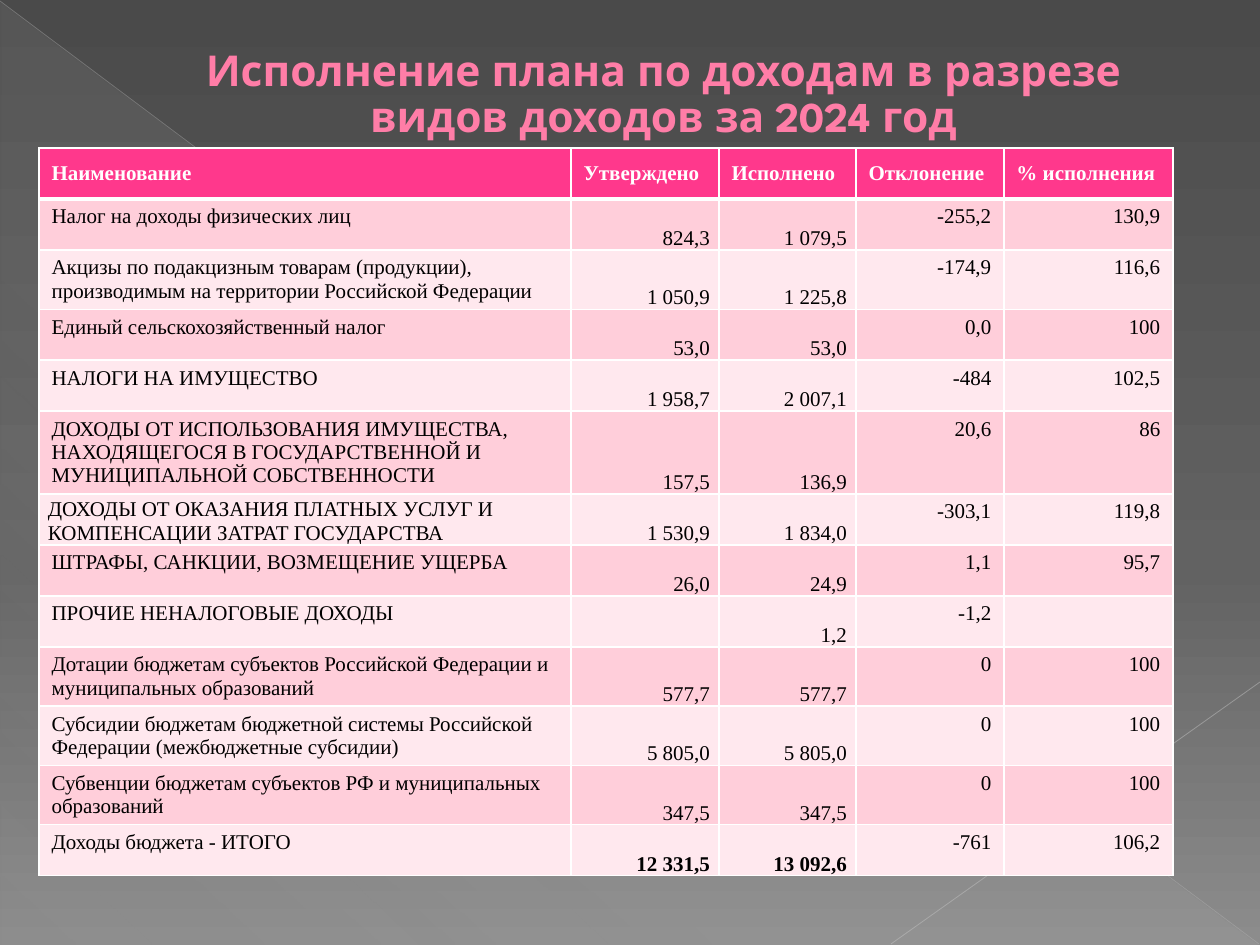
"""Build the slide on income plan execution by type for 2024."""
from lxml import etree
from pptx import Presentation
from pptx import util as u
from pptx.dml.color import RGBColor
from pptx.enum import shapes, text
from pptx.oxml import ns

SCALE = 914400 / 126
TITLE_FONT = "League Spartan"
TABLE_FONT = "Times New Roman"
WHITE = RGBColor(0xFF, 0xFF, 0xFF)
BLACK = RGBColor(0x00, 0x00, 0x00)
PINK = RGBColor(0xFF, 0x7D, 0xA7)
DARK_PINK = RGBColor(0xB1, 0x27, 0x61)
HEADER_PINK = RGBColor(0xFF, 0x38, 0x8C)
BANDS = (RGBColor(0xFF, 0xCE, 0xDA), RGBColor(0xFF, 0xE8, 0xEE))
TOP_GREY = RGBColor(0x4A, 0x4A, 0x4A)
MIDDLE_GREY = RGBColor(0x62, 0x62, 0x62)
BOTTOM_GREY = RGBColor(0x8C, 0x8C, 0x8C)
TRIANGLE_GREY = RGBColor(0xD2, 0xD2, 0xD2)
DIAGONAL_GREY = RGBColor(0xBF, 0xBF, 0xBF)
CORNER_GREY = RGBColor(0xC6, 0xC6, 0xC6)

TITLE = "Исполнение плана по доходам в разрезе видов доходов за 2024 год"
COLUMN_WIDTHS = (532, 148, 137, 148, 169)
ROW_HEIGHT = 51
PAID_SERVICES_ROW = 6
ROWS = (
    ("Наименование", "Утверждено", "Исполнено", "Отклонение", "% исполнения"),
    ("Налог на доходы физических лиц", "824,3", "1 079,5", "-255,2", "130,9"),
    ("Акцизы по подакцизным товарам (продукции), производимым на территории "
     "Российской Федерации", "1 050,9", "1 225,8", "-174,9", "116,6"),
    ("Единый сельскохозяйственный налог", "53,0", "53,0", "0,0", "100"),
    ("НАЛОГИ НА ИМУЩЕСТВО", "1 958,7", "2 007,1", "-484", "102,5"),
    ("ДОХОДЫ ОТ ИСПОЛЬЗОВАНИЯ ИМУЩЕСТВА, НАХОДЯЩЕГОСЯ В ГОСУДАРСТВЕННОЙ И "
     "МУНИЦИПАЛЬНОЙ СОБСТВЕННОСТИ", "157,5", "136,9", "20,6", "86"),
    ("ДОХОДЫ ОТ ОКАЗАНИЯ ПЛАТНЫХ УСЛУГ И КОМПЕНСАЦИИ ЗАТРАТ ГОСУДАРСТВА",
     "1 530,9", "1 834,0", "-303,1", "119,8"),
    ("ШТРАФЫ, САНКЦИИ, ВОЗМЕЩЕНИЕ УЩЕРБА", "26,0", "24,9", "1,1", "95,7"),
    ("ПРОЧИЕ НЕНАЛОГОВЫЕ ДОХОДЫ", "", "1,2", "-1,2", ""),
    ("Дотации бюджетам субъектов Российской Федерации и муниципальных образований",
     "577,7", "577,7", "0", "100"),
    ("Субсидии бюджетам бюджетной системы Российской Федерации "
     "(межбюджетные субсидии)", "5 805,0", "5 805,0", "0", "100"),
    ("Субвенции бюджетам субъектов РФ и муниципальных образований",
     "347,5", "347,5", "0", "100"),
    ("Доходы бюджета - ИТОГО", "12 331,5", "13 092,6", "-761", "106,2"),
)


def px(length):
    """Turn pixels into EMU."""
    return u.Emu(round(length * SCALE))


def add_color(parent, color, opacity=100):
    """Append a colour with its opacity in percent."""
    element = etree.SubElement(parent, ns.qn("a:srgbClr"), val=str(color))
    if opacity < 100:
        etree.SubElement(element, ns.qn("a:alpha"), val=str(opacity * 1000))


def set_gradient(properties, stops, angle):
    """Replace the solid fill of the properties by a linear gradient."""
    gradient = etree.Element(ns.qn("a:gradFill"), rotWithShape="1")
    stop_list = etree.SubElement(gradient, ns.qn("a:gsLst"))
    for position, color, opacity in stops:
        stop = etree.SubElement(stop_list, ns.qn("a:gs"), pos=str(position * 1000))
        add_color(stop, color, opacity)
    etree.SubElement(gradient, ns.qn("a:lin"), ang=str(angle * 60000), scaled="0")
    properties.replace(properties.find(ns.qn("a:solidFill")), gradient)


def set_background(slide):
    """Give the slide its grey gradient."""
    slide.background.fill.solid()
    properties = next(slide.element.iter(ns.qn("p:bgPr")))
    stops = ((0, TOP_GREY, 100), (60, MIDDLE_GREY, 100), (100, BOTTOM_GREY, 100))
    set_gradient(properties, stops, 90)


def add_triangle(slide):
    """Add the faint triangle below the diagonal."""
    triangle = slide.shapes.add_shape(
        shapes.MSO_SHAPE.RIGHT_TRIANGLE, px(1), px(2), px(1258), px(943))
    triangle.shadow.inherit = False
    triangle.line.fill.background()
    triangle.fill.solid()
    stops = ((0, TRIANGLE_GREY, 10), (70, TRIANGLE_GREY, 8), (100, TRIANGLE_GREY, 1))
    set_gradient(triangle.element.spPr, stops, 133)


def add_line(slide, start, end, color, width, opacity):
    """Add a translucent straight line."""
    line = slide.shapes.add_connector(
        shapes.MSO_CONNECTOR.STRAIGHT, *map(px, start + end))
    line.line.width = u.Pt(width)
    line.line.color.rgb = color
    properties = line.element.spPr
    fill = next(properties.iter(ns.qn("a:solidFill")))
    fill.clear()
    add_color(fill, color, opacity)
    etree.SubElement(properties, ns.qn("a:effectLst"))


def format_title(slide):
    """Write the title and bring it in front of the decoration."""
    title = slide.shapes.title
    title.left, title.top, title.width, title.height = map(px, (63, 37, 1134, 192))
    frame = title.text_frame
    frame.text = TITLE
    frame.word_wrap = True
    frame.auto_size = text.MSO_AUTO_SIZE.NONE
    frame.vertical_anchor = text.MSO_ANCHOR.MIDDLE
    frame.margin_bottom = px(80)
    paragraph = frame.paragraphs[0]
    paragraph.alignment = text.PP_ALIGN.CENTER
    paragraph.line_spacing = 0.9
    properties = paragraph.runs[0].font
    set_font(properties, TITLE_FONT, 24.3, PINK, True)
    paragraph_properties = paragraph.runs[0]._r.getparent().get_or_add_pPr()
    paragraph_properties.set("marL", str(px(67)))
    paragraph_properties.set("indent", "0")
    outline = etree.Element(ns.qn("a:ln"), w=str(u.Pt(0.5)))
    add_color(etree.SubElement(outline, ns.qn("a:solidFill")), DARK_PINK)
    paragraph.runs[0]._r.get_or_add_rPr().insert(0, outline)
    slide.shapes.element.append(title.element)


def set_font(font, name, size, color, bold):
    """Set the look of a font."""
    font.name = name
    font.size = u.Pt(size)
    font.color.rgb = color
    font.bold = bold


def set_borders(cell, top, bottom):
    """Draw white borders, with the top and bottom widths in points."""
    properties = cell._tc.get_or_add_tcPr()
    widths = (("L", 1), ("R", 1), ("T", top), ("B", bottom))
    for index, (side, width) in enumerate(widths):
        border = etree.Element(ns.qn(f"a:ln{side}"), w=str(u.Pt(width)))
        add_color(etree.SubElement(border, ns.qn("a:solidFill")), WHITE)
        properties.insert(index, border)


def format_cell(cell, row, column):
    """Format a cell by its place in the table."""
    header = row == 0
    amount = not header and column in (1, 2)
    total = amount and row == len(ROWS) - 1
    cell.fill.solid()
    cell.fill.fore_color.rgb = HEADER_PINK if header else BANDS[(row - 1) % 2]
    set_borders(cell, 3 if row == 1 else 1, 3 if header else 1)
    if header:
        cell.vertical_anchor = text.MSO_ANCHOR.MIDDLE
    elif amount or (row == PAID_SERVICES_ROW and column == 0):
        cell.vertical_anchor = text.MSO_ANCHOR.BOTTOM
        cell.margin_left = cell.margin_right = px(9)
        cell.margin_top = cell.margin_bottom = 0
    paragraph = cell.text_frame.paragraphs[0]
    if not header and column > 0:
        paragraph.alignment = text.PP_ALIGN.RIGHT
    for run in paragraph.runs:
        set_font(run.font, TABLE_FONT, 12, WHITE if header else BLACK, header or total)


def add_income_table(slide):
    """Add the table of planned and received income."""
    table = slide.shapes.add_table(
        len(ROWS), len(COLUMN_WIDTHS), px(39), px(148),
        px(sum(COLUMN_WIDTHS)), px(ROW_HEIGHT * len(ROWS))).table
    for column, width in zip(table.columns, COLUMN_WIDTHS):
        column.width = px(width)
    for row, values in enumerate(ROWS):
        table.rows[row].height = px(ROW_HEIGHT)
        for column, value in enumerate(values):
            cell = table.cell(row, column)
            cell.text_frame.text = value
            format_cell(cell, row, column)


def main():
    """Build and save the presentation."""
    presentation = Presentation()
    presentation.slide_width, presentation.slide_height = px(1260), px(945)
    slide = presentation.slides.add_slide(presentation.slide_layouts[5])
    set_background(slide)
    add_triangle(slide)
    add_line(slide, (0, 1), (1259, 944), DIAGONAL_GREY, 0.39, 35)
    add_line(slide, (1260, 682), (891, 944), CORNER_GREY, 0.47, 45)
    format_title(slide)
    add_income_table(slide)
    presentation.save("out.pptx")


if __name__ == "__main__":
    main()
